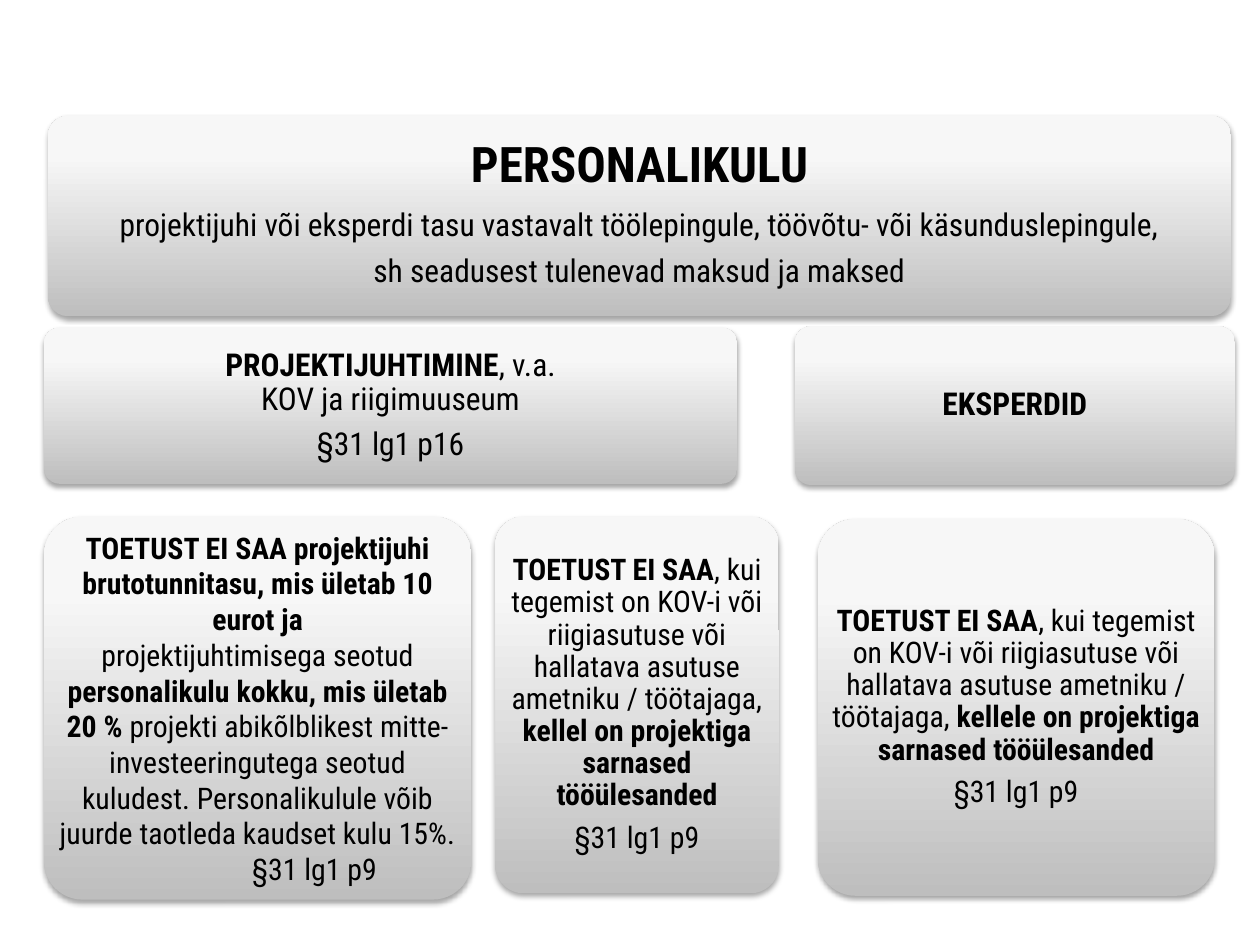
from dataclasses import dataclass

from lxml.etree import SubElement
from pptx import Presentation
from pptx.dml.color import RGBColor
from pptx.enum.shapes import MSO_SHAPE
from pptx.enum.text import MSO_ANCHOR, PP_ALIGN
from pptx.oxml import parse_xml
from pptx.oxml.ns import qn
from pptx.util import Pt


@dataclass(frozen=True)
class Theme:
    font: str = "Roboto Condensed"
    text: str = "000000"
    shadow: str = "000000"
    stops: tuple = ((0, "BEBEBE"), (80, "F7F7F7"), (100, "F8F8F8"))
    title: int = 28
    heading: int = 18
    body: int = 17


theme = Theme()


def add_text(p, text, size=theme.body, bold=False, spacing=0.9, after=0.35, indent=0):
    p.alignment = PP_ALIGN.CENTER
    p.line_spacing = spacing
    p.space_before = Pt(0)
    p.space_after = Pt(round(size * after, 1))
    if indent:
        p._p.get_or_add_pPr().set("marL", str(Pt(indent)))
    for i, part in enumerate(text.split("\n")):
        if i:
            p.add_line_break()
        r = p.add_run()
        r.text = part
        r.font.name = theme.font
        r.font.size = Pt(size)
        r.font.bold = bold
        r.font.color.rgb = RGBColor.from_string(theme.text)


def style_panel(sp):
    sp.adjustments[0] = 0.1
    sp.line.fill.background()
    stops = "".join(
        f'<a:gs pos="{pos * 1000}"><a:srgbClr val="{color}"/></a:gs>'
        for pos, color in theme.stops
    )
    fill = parse_xml(
        '<a:gradFill xmlns:a="http://schemas.openxmlformats.org/drawingml/2006/main" rotWithShape="1">'
        f'<a:gsLst>{stops}</a:gsLst><a:lin ang="16200000" scaled="0"/></a:gradFill>'
    )
    sp.element.spPr.find(qn("a:ln")).addprevious(fill)
    sp.shadow.inherit = False
    effects = sp.element.spPr.find(qn("a:effectLst"))
    shadow = SubElement(
        effects, qn("a:outerShdw"), blurRad=str(Pt(3.1)), dist=str(Pt(1.8)),
        dir="5400000", rotWithShape="0",
    )
    color = SubElement(shadow, qn("a:srgbClr"), val=theme.shadow)
    SubElement(color, qn("a:alpha"), val="35000")


prs = Presentation()
prs.slide_width, prs.slide_height = Pt(720), Pt(540)
s = prs.slides.add_slide(prs.slide_layouts[5])

heading = {"size": theme.heading}
full = {"spacing": 1.0, "after": 0}
clause = "§31 lg1 p9"
refusal = "TOETUST EI SAA"
condition = ", kui tegemist on KOV-i või riigiasutuse või hallatava asutuse ametniku / töötajaga, "
bold = {"bold": True}

panels = [
    ((27.4, 66.2, 676, 114.5), 8.6, 38, [
        [("projektijuhi või eksperdi tasu vastavalt töölepingule, töövõtu- või käsunduslepingule,", heading)],
        [("sh seadusest tulenevad maksud ja maksed", heading)],
    ]),
    ((25.2, 187.2, 396, 89.3), 5, 0, [
        [("PROJEKTIJUHTIMINE", heading | bold), (", v.a.\nKOV ja riigimuuseum", heading)],
        [("§31 lg1 p16", heading)],
    ]),
    ((454.3, 186.5, 251.3, 90.7), 5, 0, [
        [("EKSPERDID", heading | bold)],
    ]),
    ((25.2, 295.2, 244.1, 218.9), 5, 0, [
        [("TOETUST EI SAA projektijuhi brutotunnitasu, mis ületab 10 eurot ja", full | bold)],
        [
            ("projektijuhtimisega seotud ", full),
            ("personalikulu kokku, mis ületab 20 % ", full | bold),
            ("projekti abikõlblikest mitte-investeeringutega seotud kuludest. "
             "Personalikulule võib juurde taotleda kaudset kulu 15%.", full),
        ],
        [(clause, full | {"indent": 65})],
    ]),
    ((283, 295.2, 162, 215.3), 5, 0, [
        [(refusal, bold), (condition, {}), ("kellel on projektiga sarnased tööülesanded", bold)],
        [(clause, {})],
    ]),
    ((467.3, 296.6, 226.8, 215.3), 5, 0, [
        [(refusal, bold), (condition, {}), ("kellele on projektiga sarnased tööülesanded", bold)],
        [(clause, {})],
    ]),
]

for box, pad, drop, paragraphs in panels:
    sp = s.shapes.add_shape(MSO_SHAPE.ROUNDED_RECTANGLE, *map(Pt, box))
    style_panel(sp)
    tf = sp.text_frame
    tf.word_wrap = True
    tf.vertical_anchor = MSO_ANCHOR.MIDDLE
    inset = max(0, pad - 0.029 * min(box[2:]))
    tf.margin_left = tf.margin_right = tf.margin_bottom = Pt(inset)
    tf.margin_top = Pt(inset + drop)
    for i, runs in enumerate(paragraphs):
        p = tf.add_paragraph() if i else tf.paragraphs[0]
        for text, style in runs:
            add_text(p, text, **style)

title = s.shapes.title
title.left, title.top, title.width, title.height = map(Pt, (27.4, 75, 676, 40))
tf = title.text_frame
tf.vertical_anchor = MSO_ANCHOR.MIDDLE
tf.margin_top = tf.margin_bottom = 0
add_text(tf.paragraphs[0], "PERSONALIKULU", size=theme.title, bold=True, after=0)
sp.element.addnext(title.element)

prs.save("out.pptx")
